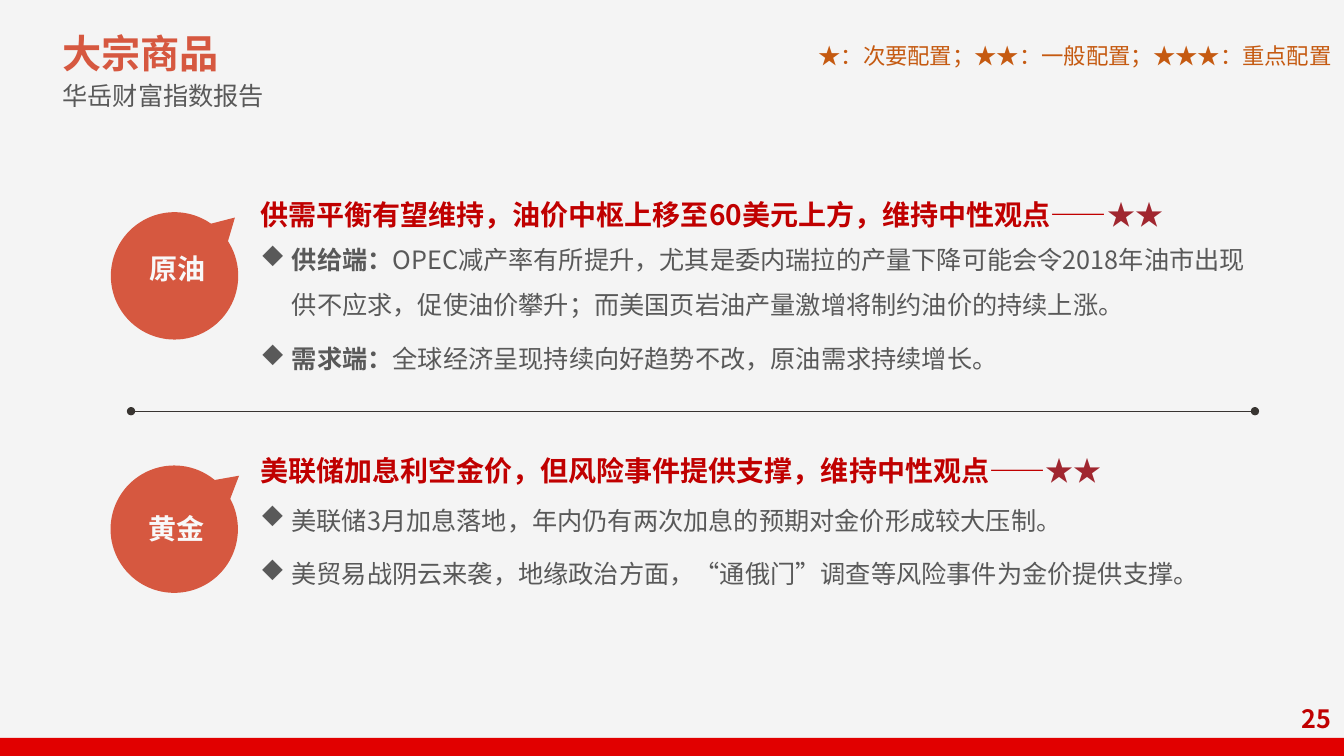
from math import cos, radians, sin

from lxml.etree import SubElement
from pptx import Presentation
from pptx.dml.color import RGBColor
from pptx.enum.lang import MSO_LANGUAGE_ID
from pptx.enum.shapes import MSO_CONNECTOR, MSO_SHAPE
from pptx.enum.text import MSO_ANCHOR, MSO_AUTO_SIZE, PP_ALIGN
from pptx.oxml.ns import qn
from pptx.util import Pt

FONT = "Noto Sans CJK SC"
CORAL, GREY, RED, STAR = "D65840", "595959", "C00000", "A0262F"


def rgb(value):
    """Turn a hex string into a colour."""
    return RGBColor.from_string(value)


def add_run(p, text, size=18, color=GREY, bold=False):
    """Add one formatted run to a paragraph."""
    r = p.add_run()
    r.text = text
    r.font.size, r.font.bold, r.font.name = Pt(size), bold, FONT
    r.font.color.rgb = rgb(color)
    r.font.language_id = MSO_LANGUAGE_ID.SIMPLIFIED_CHINESE
    SubElement(r.font._element, qn("a:ea"), typeface=FONT)


def add_bullet(p):
    """Set a diamond bullet with a hanging indent."""
    pPr = p._p.get_or_add_pPr()
    pPr.set("marL", str(Pt(22.5)))
    pPr.set("indent", str(-Pt(22.5)))
    SubElement(pPr, qn("a:buFont"), typeface="Wingdings", charset="2")
    SubElement(pPr, qn("a:buChar"), char="u")


def write(sp, paras, align=PP_ALIGN.LEFT, anchor=MSO_ANCHOR.TOP, wrap=True,
          spacing=1.0, before=0, bullet=False):
    """Fill a shape with paragraphs, each a list of (text, format) runs."""
    tf = sp.text_frame
    tf.word_wrap, tf.auto_size, tf.vertical_anchor = wrap, MSO_AUTO_SIZE.NONE, anchor
    tf.margin_left = tf.margin_right = Pt(7.2)
    tf.margin_top = tf.margin_bottom = Pt(3.6)
    for i, runs in enumerate(paras):
        p = tf.add_paragraph() if i else tf.paragraphs[0]
        p.alignment, p.line_spacing, p.space_before = align, spacing, Pt(before)
        if bullet:
            add_bullet(p)
        for text, fmt in runs:
            add_run(p, text, **fmt)


def add_text(s, x, y, w, h, paras, **fmt):
    """Add a text box."""
    write(s.shapes.add_textbox(Pt(x), Pt(y), Pt(w), Pt(h)), paras, **fmt)


def add_block(s, kind, x, y, w, h, color):
    """Add a preset shape with a flat fill, no line and no shadow."""
    sp = s.shapes.add_shape(kind, Pt(x), Pt(y), Pt(w), Pt(h))
    sp.fill.solid()
    sp.fill.fore_color.rgb = rgb(color)
    sp.line.fill.background()
    sp.shadow.inherit = False
    return sp


def add_bubble(s, cx, cy, tip, label, label_dy, d=91):
    """Draw a round speech bubble whose tail points at the angle tip."""
    bubble = add_block(s, MSO_SHAPE.OVAL_CALLOUT, cx - d / 2, cy - d / 2, d, d, CORAL)
    bubble.adjustments[0] = 60 / d * cos(radians(tip))
    bubble.adjustments[1] = 60 / d * sin(radians(tip))
    tag = add_block(s, MSO_SHAPE.RECTANGLE, cx - 25.2, cy + label_dy, 54.7, 31.7, CORAL)
    write(tag, [[(label, dict(size=20, color="F8F8F8", bold=True))]], wrap=False)


def add_section(s, x, y, w, label, heading, points, heading_w, heading_h, spacing,
                bubble_dy, tip, label_dy, body_dy, body_h):
    """Place a bubble, a starred heading and bullet points in a band."""
    add_bubble(s, x + 45.5, y + bubble_dy, tip, label, label_dy)
    add_text(s, x + 99.7, y, heading_w, heading_h,
             [[(heading, dict(size=20, color=RED, bold=True)),
               ("★★", dict(size=20, color=STAR))]], spacing=spacing)
    add_text(s, x + 99.7, y + body_dy, w - 99.7, body_h, points,
             spacing=1.5, before=6, bullet=True)


def add_header(s):
    """Place the title with its subtitle and the star legend."""
    title = s.shapes.title
    title.left, title.top, title.width, title.height = Pt(37.4), Pt(13.4), Pt(322), Pt(70)
    write(title, [[("大宗商品", dict(size=28, color=CORAL, bold=True))],
                  [("华岳财富指数报告", {})]], spacing=1.12)
    add_text(s, 577.5, 26.6, 382, 26.6,
             [[("★：次要配置；★★：一般配置；★★★：重点配置", dict(size=16, color="C55A11"))]],
             wrap=False)


def add_divider(s, x, y, w):
    """Draw a thin rule with a dot at each end."""
    line = s.shapes.add_connector(MSO_CONNECTOR.STRAIGHT, Pt(x), Pt(y), Pt(x + w), Pt(y))
    line.line.width = Pt(0.75)
    line.line.color.rgb = rgb("383431")
    for end in ("a:headEnd", "a:tailEnd"):
        SubElement(line.line._get_or_add_ln(), qn(end), type="oval")
    SubElement(line._element.spPr, qn("a:effectLst"))


def add_footer(s):
    """Place the bottom bar and the page number."""
    add_block(s, MSO_SHAPE.RECTANGLE, 0, 527, 960, 13, "E10000")
    add_text(s, 915.6, 498.6, 42.4, 28.8, [[("25", dict(color=RED, bold=True))]],
             align=PP_ALIGN.RIGHT, anchor=MSO_ANCHOR.MIDDLE)


def main():
    """Build the slide and save it."""
    prs = Presentation()
    prs.slide_width, prs.slide_height = Pt(960), Pt(540)
    s = prs.slides.add_slide(prs.slide_layouts[5])
    s.background.fill.solid()
    s.background.fill.fore_color.rgb = rgb("F4F4F4")
    bold = dict(bold=True)
    add_header(s)
    add_section(
        s, 79.2, 125.3, 832, "原油",
        "供需平衡有望维持，油价中枢上移至60美元上方，维持中性观点——",
        [[("供给端：", bold),
          ("OPEC减产率有所提升，尤其是委内瑞拉的产量下降可能会令2018年油市出现供不应求，"
           "促使油价攀升；而美国页岩油产量激增将制约油价的持续上涨。", {})],
         [("需求端：", bold), ("全球经济呈现持续向好趋势不改，原油需求持续增长。", {})]],
        heading_w=670, heading_h=43.2, spacing=1.5,
        bubble_dy=71.8, tip=-44, label_dy=-20.9, body_dy=34.8, body_h=111.6)
    add_divider(s, 93.6, 293.7, 802.8)
    add_section(
        s, 79, 320.4, 826, "黄金",
        "美联储加息利空金价，但风险事件提供支撑，维持中性观点——",
        [[("美联储3月加息落地，年内仍有两次加息的预期对金价形成较大压制。", {})],
         [("美贸易战阴云来袭，地缘政治方面，“通俄门”调查等风险事件为金价提供支撑。", {})]],
        heading_w=684.7, heading_h=31.7, spacing=1.0,
        bubble_dy=57.6, tip=-39.5, label_dy=-16, body_dy=25.9, body_h=78.5)
    add_footer(s)
    prs.save("out.pptx")


if __name__ == "__main__":
    main()
